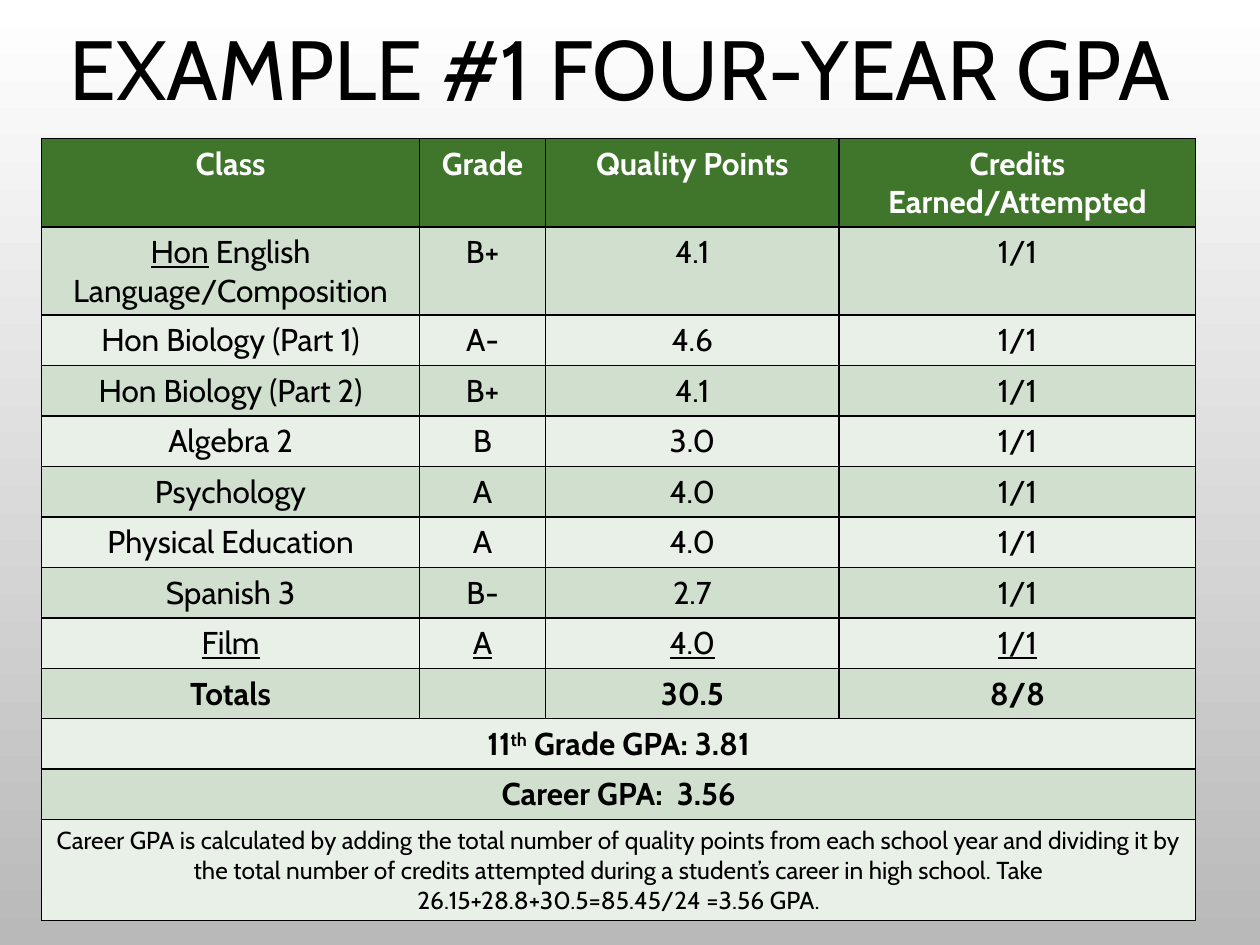
from lxml.etree import SubElement
from pptx import Presentation
from pptx.dml.color import RGBColor
from pptx.enum.text import MSO_ANCHOR, PP_ALIGN
from pptx.oxml.ns import qn
from pptx.util import Inches, Pt

# Content: a cell is a string, or a list of (text, format) spans
TITLE = "EXAMPLE #1 FOUR-YEAR GPA"
HEADER = ["Class", "Grade", "Quality Points", "Credits Earned/Attempted"]
UNDERLINED = {"underline": True}
CLASSES = [
    [[("Hon", UNDERLINED), (" English Language/Composition", {})], "B+", "4.1", "1/1"],
    ["Hon Biology (Part 1)", "A-", "4.6", "1/1"],
    ["Hon Biology (Part 2)", "B+", "4.1", "1/1"],
    ["Algebra 2", "B", "3.0", "1/1"],
    ["Psychology", "A", "4.0", "1/1"],
    ["Physical Education", "A", "4.0", "1/1"],
    ["Spanish 3", "B-", "2.7", "1/1"],
]
LAST_CLASS = ["Film", "A", "4.0", "1/1"]
TOTALS = ["Totals", "", "30.5", "8/8"]
GRADE_GPA = [[("11", {}), ("th", {"baseline": 30000}), (" Grade GPA: 3.81", {})]]
CAREER_GPA = ["Career GPA:  3.56"]
NOTE = [
    "Career GPA is calculated by adding the total number of quality points from each "
    "school year and dividing it by the total number of credits attempted during a "
    "student’s career in high school. Take 26.15+28.8+30.5=85.45/24 =3.56 GPA."
]

COLORS = {
    "text": "000000", "header_text": "FFFFFF", "header": "3F762B",
    "dark_band": "D1DFCE", "light_band": "E9F0E8", "border": "000000",
    "page_top": "FFFFFF", "page_bottom": "B9B9B9",
}
BODY = {"name": "Cabin", "size": Pt(18), "bold": False, "color": "text"}
BOLD = {**BODY, "bold": True}

# Rows: cells, text format, height in inches
ROWS = [
    (HEADER, {**BOLD, "color": "header_text"}, 0.67),
    *[(cells, BODY, 0.38) for cells in CLASSES],
    (LAST_CLASS, {**BODY, **UNDERLINED}, 0.38),
    (TOTALS, BOLD, 0.38),
    (GRADE_GPA, BOLD, 0.38),
    (CAREER_GPA, BOLD, 0.38),
    (NOTE, {**BODY, "size": Pt(14)}, 0.76),
]
COLUMN_WIDTHS = [3, 1, 2.33, 2.83]
TABLE_HEIGHT = Inches(6.2)
TWO_LINE_ROW, TWO_LINE_HEIGHT = 1, 0.67


def rgb(name):
    return RGBColor.from_string(COLORS[name])


def write(para, content, style):
    para.alignment = PP_ALIGN.CENTER
    spans = [(content, {})] if isinstance(content, str) else content
    for text, changes in spans:
        if not text:
            continue
        span = para.add_run()
        span.text = text
        for key, value in {**style, **changes}.items():
            if key == "color":
                span.font.color.rgb = rgb(value)
            elif key == "baseline":
                span._r.get_or_add_rPr().set("baseline", str(value))
            else:
                setattr(span.font, key, value)


def add_borders(cell):
    properties = cell._tc.get_or_add_tcPr()
    for side in ("a:lnL", "a:lnR", "a:lnT", "a:lnB"):
        line = SubElement(properties, qn(side), w=str(Pt(1)))
        fill = SubElement(line, qn("a:solidFill"))
        SubElement(fill, qn("a:srgbClr"), val=COLORS["border"])


deck = Presentation()
deck.slide_width, deck.slide_height = Inches(10), Inches(7.5)
page = deck.slides.add_slide(deck.slide_layouts[6])

# Background, light at the top
background = page.background.fill
background.gradient()
background.gradient_angle = 270
for stop, name in zip(background.gradient_stops, ("page_top", "page_bottom")):
    stop.color.rgb = rgb(name)

# Title
box = page.shapes.add_textbox(Inches(0.42), Inches(0.08), Inches(9), Inches(1))
frame = box.text_frame
frame.word_wrap = True
frame.vertical_anchor = MSO_ANCHOR.MIDDLE
frame.paragraphs[0].line_spacing = 0.9
write(frame.paragraphs[0], TITLE, {**BODY, "size": Pt(48)})

# Grade table
holder = page.shapes.add_table(
    len(ROWS), len(COLUMN_WIDTHS), Inches(0.33), Inches(1.1), Inches(9.17), TABLE_HEIGHT
)
table = holder.table
for column, width in zip(table.columns, COLUMN_WIDTHS):
    column.width = Inches(width)

for index, (cells, style, height) in enumerate(ROWS):
    table.rows[index].height = Inches(TWO_LINE_HEIGHT if index == TWO_LINE_ROW else height)
    band = "header" if index == 0 else "dark_band" if index % 2 else "light_band"
    for number in range(len(COLUMN_WIDTHS)):
        cell = table.cell(index, number)
        add_borders(cell)
        cell.fill.solid()
        cell.fill.fore_color.rgb = rgb(band)
    if len(cells) == 1:
        table.cell(index, 0).merge(table.cell(index, len(COLUMN_WIDTHS) - 1))
    for number, content in enumerate(cells):
        write(table.cell(index, number).text_frame.paragraphs[0], content, style)

# Row heights resize the frame, so its height is set last
holder.height = TABLE_HEIGHT

deck.save("out.pptx")
